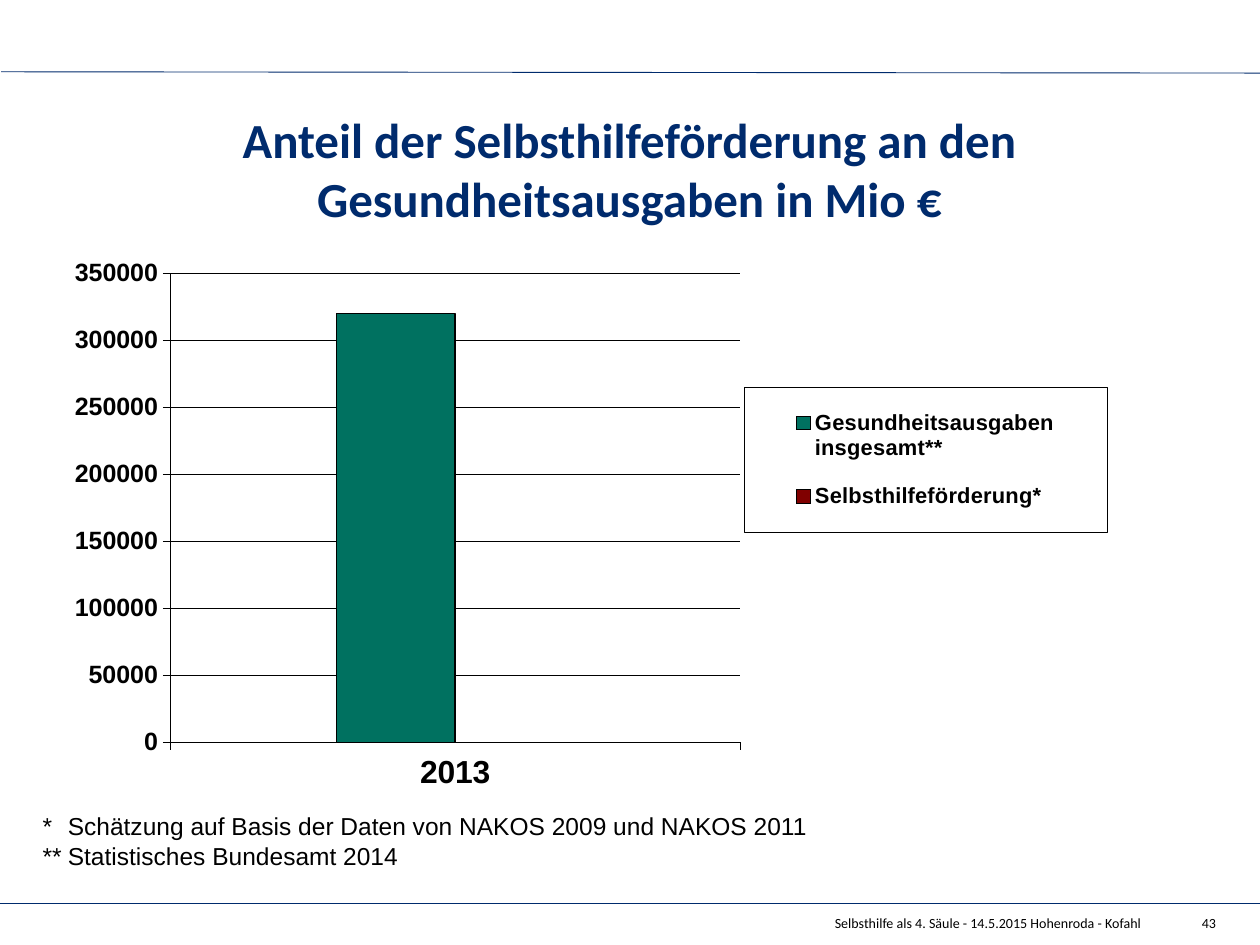
import lxml.etree
import pptx
import pptx.chart.data
import pptx.dml.color
import pptx.enum.chart
import pptx.enum.shapes
import pptx.enum.text
import pptx.oxml
import pptx.oxml.ns
import pptx.util

Inches = pptx.util.Inches
Align = pptx.enum.text.PP_ALIGN
Anchor = pptx.enum.text.MSO_ANCHOR
COLORS = {"navy": "002B6D", "black": "000000", "white": "FFFFFF",
          "green": "007160", "red": "800000"}


def rgb(name):
    """Return the named colour."""
    return pptx.dml.color.RGBColor.from_string(COLORS[name])


def set_font(font, name="Arial", size=14, color="black", bold=False):
    """Apply a typeface, size, colour and weight."""
    font.name = name
    font.size = pptx.util.Pt(size)
    font.bold = bold
    font.color.rgb = rgb(color)


def set_line(line, color="black", width=0.25):
    """Apply a solid line colour and width."""
    line.color.rgb = rgb(color)
    line.width = pptx.util.Pt(width)


def write_text(frame, text, align=Align.LEFT, anchor=Anchor.TOP, tab=None, **font):
    """Write one paragraph per line of text in the given format."""
    frame.word_wrap = True
    frame.vertical_anchor = anchor
    for index, content in enumerate(text.split("\n")):
        paragraph = frame.add_paragraph() if index else frame.paragraphs[0]
        paragraph.alignment = align
        if tab:
            properties = paragraph._p.get_or_add_pPr()
            tabs = pptx.oxml.ns.qn("a:tabLst")
            stop = lxml.etree.SubElement(
                lxml.etree.SubElement(properties, tabs), pptx.oxml.ns.qn("a:tab"))
            stop.set("pos", str(Inches(tab)))
            stop.set("algn", "l")
        run = paragraph.add_run()
        run.text = content
        set_font(run.font, **font)


def set_layout(parent, follower_tag, x, y, width, height, inner=False):
    """Place a chart part by fractions of the chart area."""
    qn = pptx.oxml.ns.qn
    for old in parent.findall(qn("c:layout")):
        parent.remove(old)
    layout = parent.makeelement(qn("c:layout"))
    manual = lxml.etree.SubElement(layout, qn("c:manualLayout"))
    values = [("layoutTarget", "inner")] if inner else []
    values += [("xMode", "edge"), ("yMode", "edge"),
               ("x", x), ("y", y), ("w", width), ("h", height)]
    for tag, value in values:
        lxml.etree.SubElement(manual, qn("c:" + tag)).set("val", str(value))
    parent.find(qn(follower_tag)).addprevious(layout)


class SlideBuilder:
    """Hold the shared style and add elements to the current slide."""

    def __init__(self, slide):
        self.slide = slide
        self.footer = dict(name="Calibri", size=8, align=Align.RIGHT)
        slide.background.fill.solid()
        slide.background.fill.fore_color.rgb = rgb("white")

    def rule(self, x1, y1, x2, y2):
        """Add a thin navy line."""
        connector = self.slide.shapes.add_connector(
            pptx.enum.shapes.MSO_CONNECTOR.STRAIGHT, *map(Inches, (x1, y1, x2, y2)))
        set_line(connector.line, "navy", 0.5)
        lxml.etree.SubElement(connector._element.spPr, pptx.oxml.ns.qn("a:effectLst"))

    def text(self, box, text, **style):
        """Add a text box."""
        shape = self.slide.shapes.add_textbox(*map(Inches, box))
        write_text(shape.text_frame, text, **style)

    def column_chart(self, box, category, series):
        """Add a clustered column chart with a boxed legend."""
        data = pptx.chart.data.CategoryChartData()
        data.categories = [category]
        for name, value, _ in series:
            data.add_series(name, [value])
        chart = self.slide.shapes.add_chart(
            pptx.enum.chart.XL_CHART_TYPE.COLUMN_CLUSTERED,
            *map(Inches, box), data).chart
        chart.has_title = False
        set_font(chart.font, size=18.2, bold=True)
        plot = chart.plots[0]
        plot.gap_width = 280
        plot.overlap = 0
        plot.vary_by_categories = False
        for item, (_, _, color) in zip(plot.series, series):
            item.format.fill.solid()
            item.format.fill.fore_color.rgb = rgb(color)
            set_line(item.format.line, width=0.97)
        for axis, size in ((chart.category_axis, 18.2), (chart.value_axis, 14.3)):
            axis.major_tick_mark = pptx.enum.chart.XL_TICK_MARK.OUTSIDE
            axis.minor_tick_mark = pptx.enum.chart.XL_TICK_MARK.NONE
            set_font(axis.tick_labels.font, size=size, bold=True)
            set_line(axis.format.line)
        chart.category_axis.tick_label_position = pptx.enum.chart.XL_TICK_LABEL_POSITION.LOW
        value_axis = chart.value_axis
        value_axis.minimum_scale, value_axis.maximum_scale = 0, 350000
        value_axis.major_unit = 50000
        value_axis.tick_labels.number_format = "0"
        value_axis.tick_labels.number_format_is_linked = False
        set_line(value_axis.major_gridlines.format.line)
        self.legend(chart)
        set_layout(chart._chartSpace.chart.plotArea, "c:barChart",
                   0.105, 0.023, 0.544, 0.842, inner=True)

    def legend(self, chart):
        """Add the outlined legend to the right of the columns."""
        chart.has_legend = True
        legend = chart.legend
        legend.position = pptx.enum.chart.XL_LEGEND_POSITION.RIGHT
        legend.include_in_layout = False
        set_font(legend.font, size=12.5, bold=True)
        set_layout(legend._element, "c:overlay", 0.653, 0.228, 0.347, 0.26)
        border = pptx.oxml.parse_xml(
            f'<c:spPr {pptx.oxml.ns.nsdecls("c", "a")}><a:ln w="3175"><a:solidFill>'
            f'<a:srgbClr val="{COLORS["black"]}"/></a:solidFill></a:ln></c:spPr>')
        legend._element.find(pptx.oxml.ns.qn("c:txPr")).addprevious(border)


def main():
    """Build and save the slide."""
    presentation = pptx.Presentation()
    presentation.slide_width, presentation.slide_height = Inches(10), Inches(7.5)
    builder = SlideBuilder(presentation.slides.add_slide(presentation.slide_layouts[6]))
    builder.rule(0.01, 0.57, 10, 0.58)
    builder.rule(0, 7.17, 10, 7.17)
    builder.text((5.99, 7.21, 3.17, 0.17),
                 "Selbsthilfe als 4. Säule - 14.5.2015 Hohenroda - Kofahl", **builder.footer)
    builder.text((0.66, 0.67, 8.67, 1.33),
                 "Anteil der Selbsthilfeförderung an den Gesundheitsausgaben in Mio €",
                 align=Align.CENTER, anchor=Anchor.MIDDLE,
                 name="Calibri", size=28, color="navy", bold=True)
    builder.column_chart((0.48, 2.06, 8.31, 4.43), "2013", [
        ("Gesundheitsausgaben insgesamt**", 320000, "green"),
        ("Selbsthilfeförderung*", 0, "red")])
    builder.text((0.24, 6.39, 6.3, 0.81),
                 "*\tSchätzung auf Basis der Daten von NAKOS 2009 und NAKOS 2011\n"
                 "**\tStatistisches Bundesamt 2014", tab=0.2)
    builder.text((9.25, 7.21, 0.5, 0.17), "43", **builder.footer)
    presentation.save("out.pptx")


if __name__ == "__main__":
    main()
